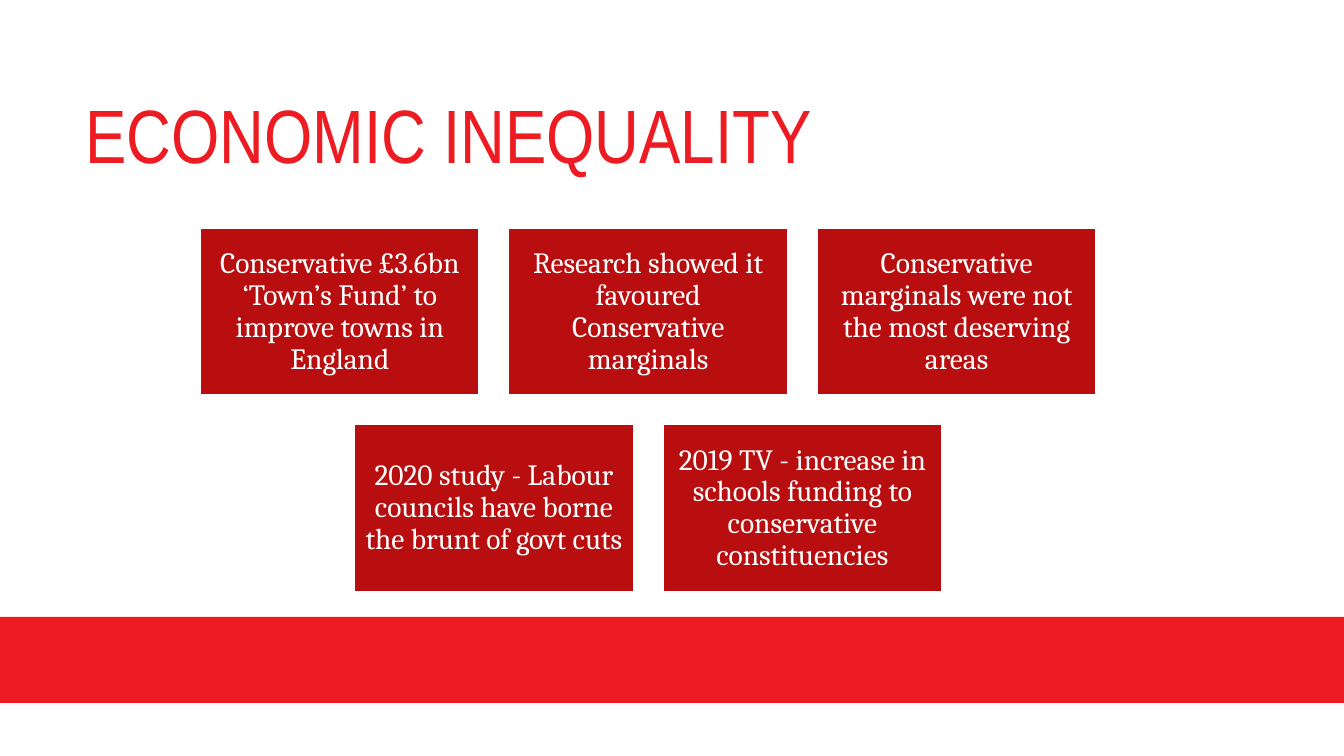
from pptx import Presentation
from pptx.dml.color import RGBColor
from pptx.enum import shapes, text
from pptx.util import Pt

RED = RGBColor(0xED, 0x1C, 0x23)
DARK_RED = RGBColor(0xB8, 0x0E, 0x0F)
WHITE = RGBColor(0xFF, 0xFF, 0xFF)

SLIDE_WIDTH = 960
CARD_WIDTH, CARD_HEIGHT = 200.2, 120.1
CARD_GAP = 20.1
CARDS_CENTRE, CARDS_TOP = 463, 162.7

CARD_ROWS = [
    [
        "Conservative £3.6bn ‘Town’s Fund’ to improve towns in England",
        "Research showed it favoured Conservative marginals",
        "Conservative marginals were not the most deserving areas",
    ],
    [
        "2020 study - Labour councils have borne the brunt of govt cuts",
        "2019 TV - increase in schools funding to conservative constituencies",
    ],
]

presentation = Presentation()
presentation.slide_width = Pt(SLIDE_WIDTH)
presentation.slide_height = Pt(540)
slide = presentation.slides.add_slide(presentation.slide_layouts[6])


def add_rectangle(left, top, width, height, color):
    shape = slide.shapes.add_shape(
        shapes.MSO_SHAPE.RECTANGLE, Pt(left), Pt(top), Pt(width), Pt(height))
    shape.shadow.inherit = False
    shape.fill.solid()
    shape.fill.fore_color.rgb = color
    shape.line.fill.background()
    return shape


def write_text(shape, words, font_name, size, color, alignment):
    frame = shape.text_frame
    frame.word_wrap = True
    frame.vertical_anchor = text.MSO_ANCHOR.MIDDLE
    paragraph = frame.paragraphs[0]
    paragraph.text = words
    paragraph.alignment = alignment
    paragraph.line_spacing = 0.9
    paragraph.font.name = font_name
    paragraph.font.size = Pt(size)
    paragraph.font.color.rgb = color


# Band across the foot of the slide
add_rectangle(0, 440.7, SLIDE_WIDTH, 61.3, RED)

# Title
title = slide.shapes.add_textbox(Pt(54), Pt(54), Pt(657.4), Pt(90.7))
write_text(title, "ECONOMIC INEQUALITY", "Arial Narrow", 54, RED,
           text.PP_ALIGN.LEFT)

# Cards, each row centred on the same axis
for row, card_texts in enumerate(CARD_ROWS):
    row_width = len(card_texts) * (CARD_WIDTH + CARD_GAP) - CARD_GAP
    top = CARDS_TOP + row * (CARD_HEIGHT + CARD_GAP)
    for column, words in enumerate(card_texts):
        left = CARDS_CENTRE - row_width / 2 + column * (CARD_WIDTH + CARD_GAP)
        card = add_rectangle(left, top, CARD_WIDTH, CARD_HEIGHT, DARK_RED)
        card.line.color.rgb = WHITE
        card.line.width = Pt(2)
        frame = card.text_frame
        frame.margin_left = frame.margin_right = Pt(6.3)
        frame.margin_top = frame.margin_bottom = Pt(6.3)
        write_text(card, words, "Cambria", 21, WHITE, text.PP_ALIGN.CENTER)

presentation.save("out.pptx")
